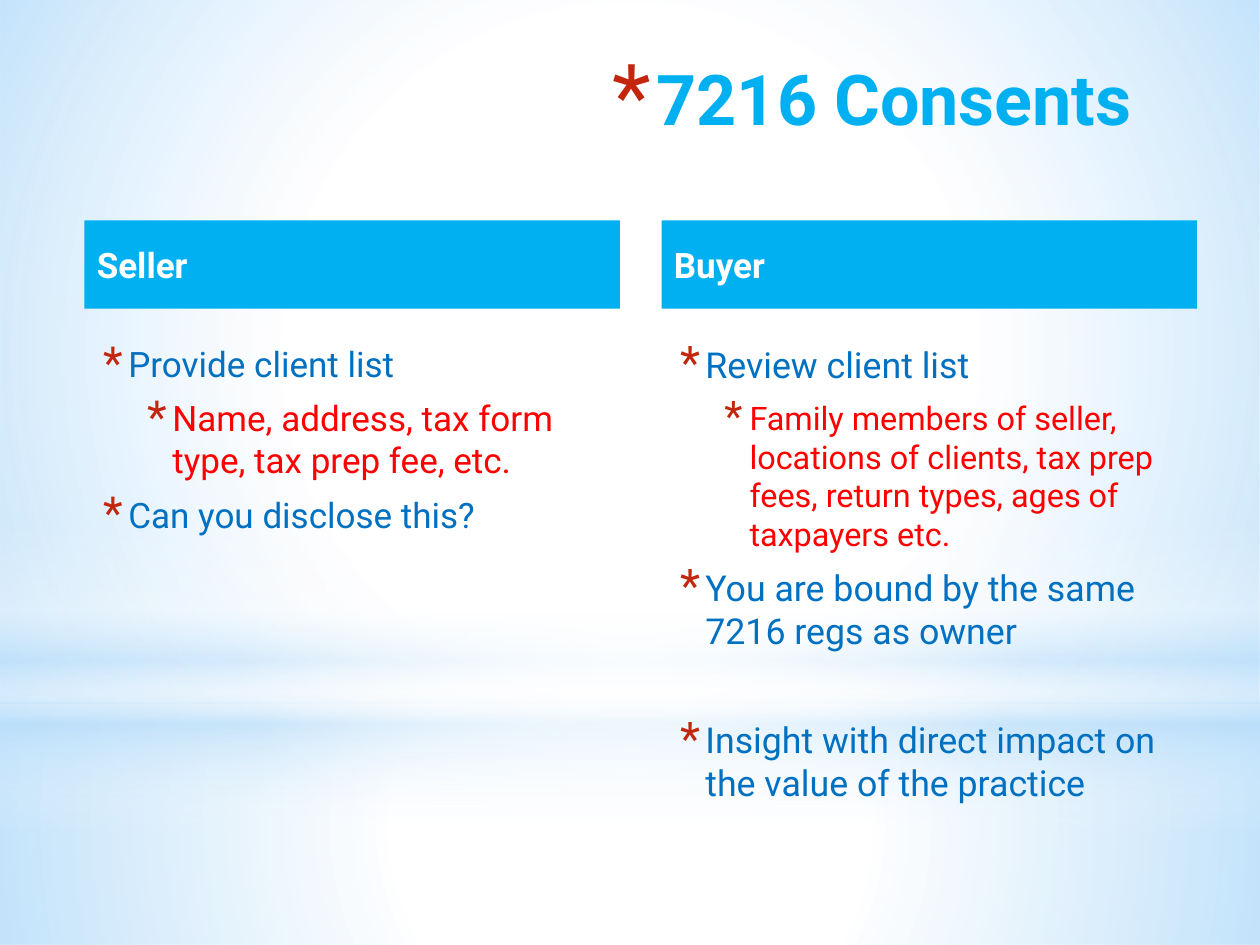
import dataclasses

import pptx
import pptx.dml.color
import pptx.enum.shapes
import pptx.enum.text
import pptx.oxml
import pptx.oxml.ns
import pptx.util

Inches, Pt = pptx.util.Inches, pptx.util.Pt
SHAPE = pptx.enum.shapes.MSO_SHAPE
ALIGN = pptx.enum.text.PP_ALIGN
ANCHOR = pptx.enum.text.MSO_ANCHOR


@dataclasses.dataclass(frozen=True)
class Theme:
    font: str = "Roboto"
    accent: str = "00B0F0"
    body: str = "0070C0"
    detail: str = "FF0000"
    bullet: str = "C3260C"
    white: str = "FFFFFF"
    sky: str = "B4DCFA"
    title_size: float = 40
    head_size: float = 20


T = Theme()


def rgb(value):
    return pptx.dml.color.RGBColor.from_string(value)


def add_bullet(p, left, hang, percent):
    pPr = p._p.get_or_add_pPr()
    pPr.set("marL", str(Inches(left)))
    pPr.set("indent", str(-Inches(hang)))
    ns = pptx.oxml.ns.nsdecls("a")
    for xml in (
        f'<a:buClr {ns}><a:srgbClr val="{T.bullet}"/></a:buClr>',
        f'<a:buSzPct {ns} val="{percent * 1000}"/>',
        f'<a:buFont {ns} typeface="{T.font}"/>',
        f'<a:buChar {ns} char="*"/>',
    ):
        pPr.append(pptx.oxml.parse_xml(xml))


def add_text(tf, text, size, color, bold=False, align=ALIGN.LEFT,
             before=0, after=0, bullet=None):
    """Write one paragraph; bullet is (left indent, hang, size percent)."""
    p = tf.paragraphs[0] if not tf.text else tf.add_paragraph()
    p.alignment = align
    p.space_before, p.space_after = Pt(before), Pt(after)
    if bullet:
        add_bullet(p, *bullet)
    r = p.add_run()
    r.text = text
    r.font.name, r.font.size, r.font.bold = T.font, Pt(size), bold
    r.font.color.rgb = rgb(color)


def add_box(s, box, anchor=ANCHOR.TOP):
    tf = s.shapes.add_textbox(*map(Inches, box)).text_frame
    tf.word_wrap = True
    tf.vertical_anchor = anchor
    return tf


def add_plain_shape(s, kind, box):
    sp = s.shapes.add_shape(kind, *map(Inches, box))
    sp.shadow.inherit = False
    sp.line.fill.background()
    return sp


def add_glow(s, kind, box, stops, linear=False):
    """Add a shape with a gradient of (position, colour, opacity) stops."""
    sp = add_plain_shape(s, kind, box)
    sp.fill.background()
    gs = "".join(
        f'<a:gs pos="{pos * 1000}"><a:srgbClr val="{color}">'
        f'<a:alpha val="{alpha * 1000}"/></a:srgbClr></a:gs>'
        for pos, color, alpha in stops)
    shade = '<a:lin ang="5400000" scaled="0"/>' if linear else (
        '<a:path path="circle"><a:fillToRect l="50000" t="50000" '
        'r="50000" b="50000"/></a:path>')
    grad = pptx.oxml.parse_xml(
        f'<a:gradFill {pptx.oxml.ns.nsdecls("a")} rotWithShape="1">'
        f'<a:gsLst>{gs}</a:gsLst>{shade}</a:gradFill>')
    spPr = sp._element.spPr
    spPr.replace(spPr.find(pptx.oxml.ns.qn("a:noFill")), grad)


def add_backdrop(s, width, height):
    horizon = 5.58
    # Floor and sky
    add_glow(s, SHAPE.RECTANGLE, (0, horizon, width, height - horizon),
             [(0, T.white, 91), (37, T.white, 76), (100, T.sky, 79)])
    add_glow(s, SHAPE.RECTANGLE, (0, 0, width, horizon),
             [(0, T.white, 89), (48, T.white, 62), (100, T.sky, 79)])
    # Horizon band
    add_glow(s, SHAPE.RECTANGLE, (0, 4.12, width, 2.5),
             [(0, T.white, 0), (29, T.white, 30), (45, T.sky, 40),
              (55, T.white, 26), (65, T.sky, 60), (100, T.white, 0)],
             linear=True)
    # Central light
    add_glow(s, SHAPE.OVAL, (0, 1.75, width, horizon),
             [(0, T.white, 100), (56, T.white, 0)])


def add_title(s, box, text):
    tf = add_box(s, box, ANCHOR.MIDDLE)
    add_text(tf, text, T.title_size, T.accent, bold=True,
             align=ALIGN.RIGHT, bullet=(0.35, 0.35, 128))


def add_column(s, box, heading, items, sizes):
    """Items are (level, text, space before); sizes are given per level."""
    left, top, width, height = box
    head_height, gap = 0.7, 0.22

    # Bulleted list
    body_top = head_height + gap
    tf = add_box(s, (left, top + body_top, width, height - body_top))
    for level, text, before in items:
        add_text(tf, text, sizes[level], (T.body, T.detail)[level],
                 before=before, after=3,
                 bullet=(0.25 + 0.35 * level, 0.2, 130))

    # Heading bar
    sp = add_plain_shape(s, SHAPE.RECTANGLE, (left, top, width, head_height))
    sp.fill.solid()
    sp.fill.fore_color.rgb = rgb(T.accent)
    tf = sp.text_frame
    tf.word_wrap = True
    tf.vertical_anchor = ANCHOR.MIDDLE
    add_text(tf, heading, T.head_size, T.white, bold=True, before=4, after=3)


def main():
    prs = pptx.Presentation()
    width, height = 10, 7.5
    prs.slide_width, prs.slide_height = Inches(width), Inches(height)
    s = prs.slides.add_slide(prs.slide_layouts[6])

    add_backdrop(s, width, height)
    add_title(s, (0.58, 0.3, 8.5, 0.95), "7216 Consents")
    add_column(s, (0.67, 1.75, 4.25, 4.84), "Seller", [
        (0, "Provide client list", 4),
        (1, "Name, address, tax form type, tax prep fee, etc.", 4),
        (0, "Can you disclose this?", 4),
    ], sizes=(20, 20))
    add_column(s, (5.25, 1.75, 4.25, 4.84), "Buyer", [
        (0, "Review client list", 4),
        (1, "Family members of seller, locations of clients, tax prep fees, "
            "return types, ages of taxpayers etc.", 4),
        (0, "You are bound by the same 7216 regs as owner", 4),
        (0, "Insight with direct impact on the value of the practice", 35),
    ], sizes=(20.4, 18.5))

    prs.save("out.pptx")


if __name__ == "__main__":
    main()
